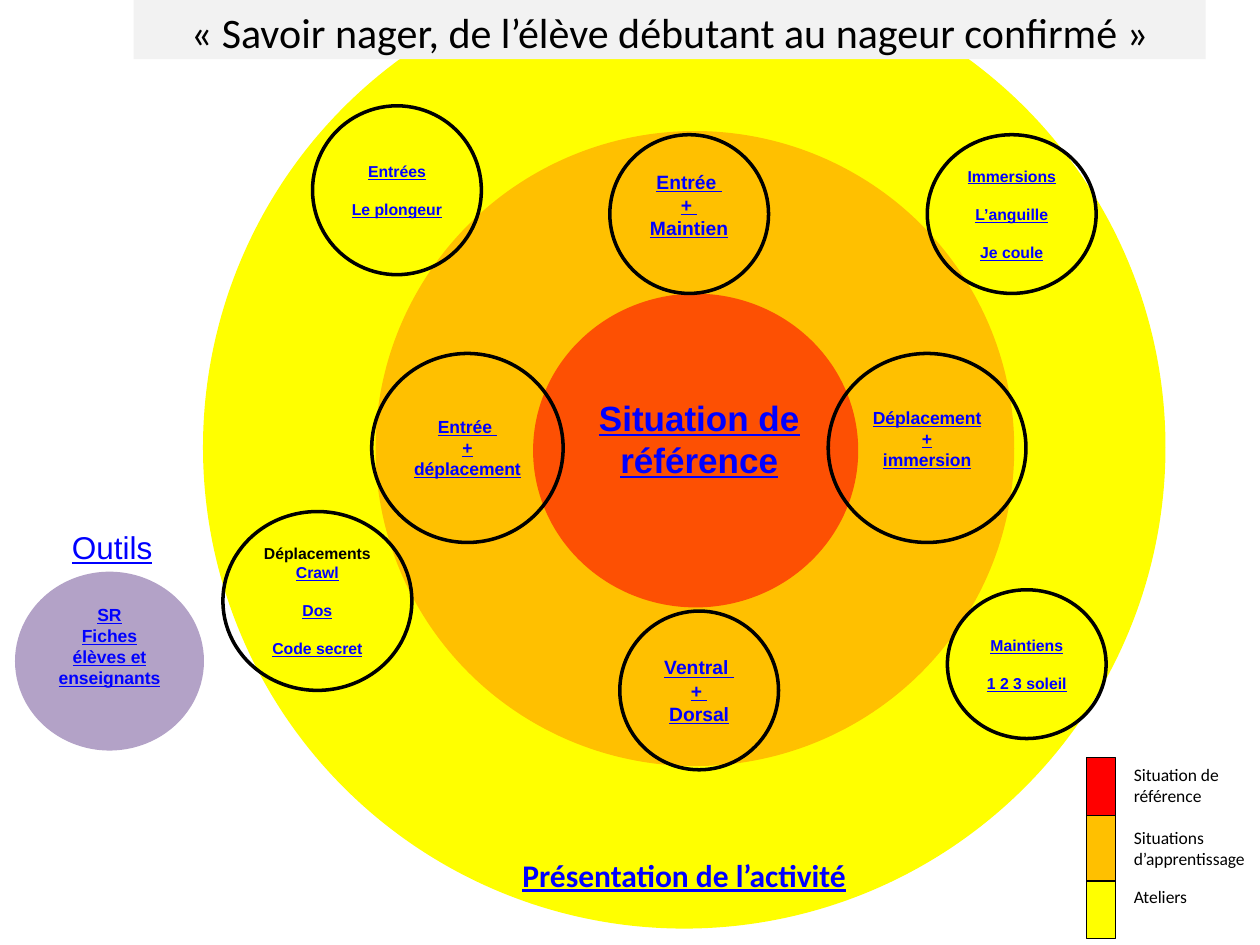
"""Build the swimming activity map: rings of situations, workshop bubbles and legend."""
from dataclasses import dataclass
from typing import Optional

from pptx import Presentation
from pptx import util as u
from pptx.dml import color as dml
from pptx.enum import shapes, text

COLORS = {
    "link": "0000FF",
    "ink": "000000",
    "workshop": "FFFF00",
    "learning": "FFC000",
    "reference": "FD5003",
    "reference_key": "FF0000",
    "tools": "B3A2C7",
    "banner": "F2F2F2",
}
OVAL = shapes.MSO_SHAPE.OVAL
RECTANGLE = shapes.MSO_SHAPE.RECTANGLE


@dataclass(frozen=True)
class Box:
    left: float
    top: float
    width: float
    height: float

    def lengths(self) -> tuple:
        return u.Pt(self.left), u.Pt(self.top), u.Pt(self.width), u.Pt(self.height)


@dataclass(frozen=True)
class Bubble:
    box: Box
    lines: tuple
    size: float
    gaps: tuple = ()
    tail: float = 0
    heading: str = "link"


@dataclass(frozen=True)
class Key:
    color: str
    height: float
    label: str
    gap: float


RINGS = (
    (Box(116, -19.4, 550, 550), "workshop"),
    (Box(214.6, 74.9, 365, 362.9), "learning"),
    (Box(304.6, 167.8, 185.8, 179.3), "reference"),
)
BUBBLES = (
    Bubble(Box(178.6, 60.5, 96.5, 96.5), ("Entrées", "Le plongeur"), 9, (0, 11)),
    Bubble(Box(127.4, 292.3, 108, 102.2), ("Déplacements", "Crawl", "Dos", "Code secret"),
           9, (0, 0, 11, 11), heading="ink"),
    Bubble(Box(212.4, 202, 109.4, 108), ("Entrée ", "+", "déplacement"), 10),
    Bubble(Box(354.2, 349.2, 90.7, 90.7), ("Ventral ", "+ ", "Dorsal"), 11),
    Bubble(Box(541.4, 337, 90.7, 85), ("Maintiens", "1 2 3 soleil"), 9, (0, 11)),
    Bubble(Box(529.9, 77, 96.5, 90.7), ("Immersions", "L’anguille", "Je coule"), 9, (0, 11, 11)),
    Bubble(Box(473.3, 202, 113, 108), ("Déplacement", "+", "immersion"), 10, tail=10.5),
    Bubble(Box(348.5, 77, 90.7, 90.7), ("Entrée ", "+ ", "Maintien"), 11, tail=10.5),
)
KEYS = (
    Key("reference_key", 33, "Situation de référence", 0),
    Key("learning", 37.4, "Situations d’apprentissage", 12),
    Key("workshop", 33, "Ateliers", 9.5),
)


def rgb(name: str) -> dml.RGBColor:
    return dml.RGBColor.from_string(COLORS[name])


def write(holder, lines: tuple, *, size: float, font: str = "Arial", color: str = "link",
          heading: Optional[str] = None, bold: bool = False, centered: bool = True,
          middle: bool = False, gaps: tuple = (), tail: float = 0) -> None:
    """Fill a shape with one paragraph per line; link-coloured lines are underlined."""
    frame = holder.text_frame
    frame.word_wrap = True
    frame.vertical_anchor = text.MSO_ANCHOR.MIDDLE if middle else text.MSO_ANCHOR.TOP
    frame.margin_bottom = u.Pt(3.6 + tail)
    for index, line in enumerate(lines):
        paragraph = frame.add_paragraph() if index else frame.paragraphs[0]
        paragraph.alignment = text.PP_ALIGN.CENTER if centered else text.PP_ALIGN.LEFT
        paragraph.space_before = u.Pt(gaps[index] if gaps else 0)
        run = paragraph.add_run()
        run.text = line
        tone = heading if heading and index == 0 else color
        run.font.name = font
        run.font.size = u.Pt(size)
        run.font.bold = bold
        run.font.underline = tone == "link"
        run.font.color.rgb = rgb(tone)


def draw(slide, kind, box: Box, fill: Optional[str] = None, outline: float = 0):
    """Add a preset shape with an optional fill and black outline."""
    shape = slide.shapes.add_shape(kind, *box.lengths())
    shape.shadow.inherit = False
    if fill:
        shape.fill.solid()
        shape.fill.fore_color.rgb = rgb(fill)
    else:
        shape.fill.background()
    if outline:
        shape.line.color.rgb = rgb("ink")
        shape.line.width = u.Pt(outline)
    else:
        shape.line.fill.background()
    return shape


def label(slide, box: Box, lines: tuple, **style) -> None:
    """Add a text box."""
    write(slide.shapes.add_textbox(*box.lengths()), lines, **style)


def draw_legend(slide, left: float, top: float) -> None:
    """Stack the colour keys and put their labels beside them."""
    label(slide, Box(left + 20, top, 87.8, 104), tuple(key.label for key in KEYS),
          size=10, font="Calibri", color="ink", centered=False,
          gaps=tuple(key.gap for key in KEYS))
    for key in KEYS:
        draw(slide, RECTANGLE, Box(left, top, 16.6, key.height), key.color, 0.75)
        top += key.height


def main() -> None:
    """Compose and save the slide."""
    deck = Presentation()
    deck.slide_width, deck.slide_height = u.Pt(720), u.Pt(540)
    slide = deck.slides.add_slide(deck.slide_layouts[6])

    for box, color in RINGS:
        draw(slide, OVAL, box, color)
    label(slide, Box(320.4, 222.8, 158.4, 54), ("Situation de référence",), size=20, bold=True)
    draw_legend(slide, 620.8, 433)

    banner = draw(slide, RECTANGLE, Box(76.3, 0, 612.7, 33.8), "banner")
    write(banner, ("« Savoir nager, de l’élève débutant au nageur confirmé »",),
          size=24, font="Calibri", color="ink")
    label(slide, Box(161.3, 485.6, 459.4, 28.8), ("Présentation de l’activité",),
          size=18, font="Calibri", bold=True)

    for bubble in BUBBLES:
        write(draw(slide, OVAL, bubble.box, outline=2), bubble.lines, size=bubble.size,
              heading=bubble.heading, bold=True, middle=True, gaps=bubble.gaps, tail=bubble.tail)

    tools = draw(slide, OVAL, Box(8.6, 326.7, 108, 102.2), "tools")
    write(tools, ("SR", "Fiches élèves et", "enseignants"), size=10, bold=True)
    label(slide, Box(14.4, 298, 99.4, 28.8), ("Outils",), size=18)

    deck.save("out.pptx")


if __name__ == "__main__":
    main()
